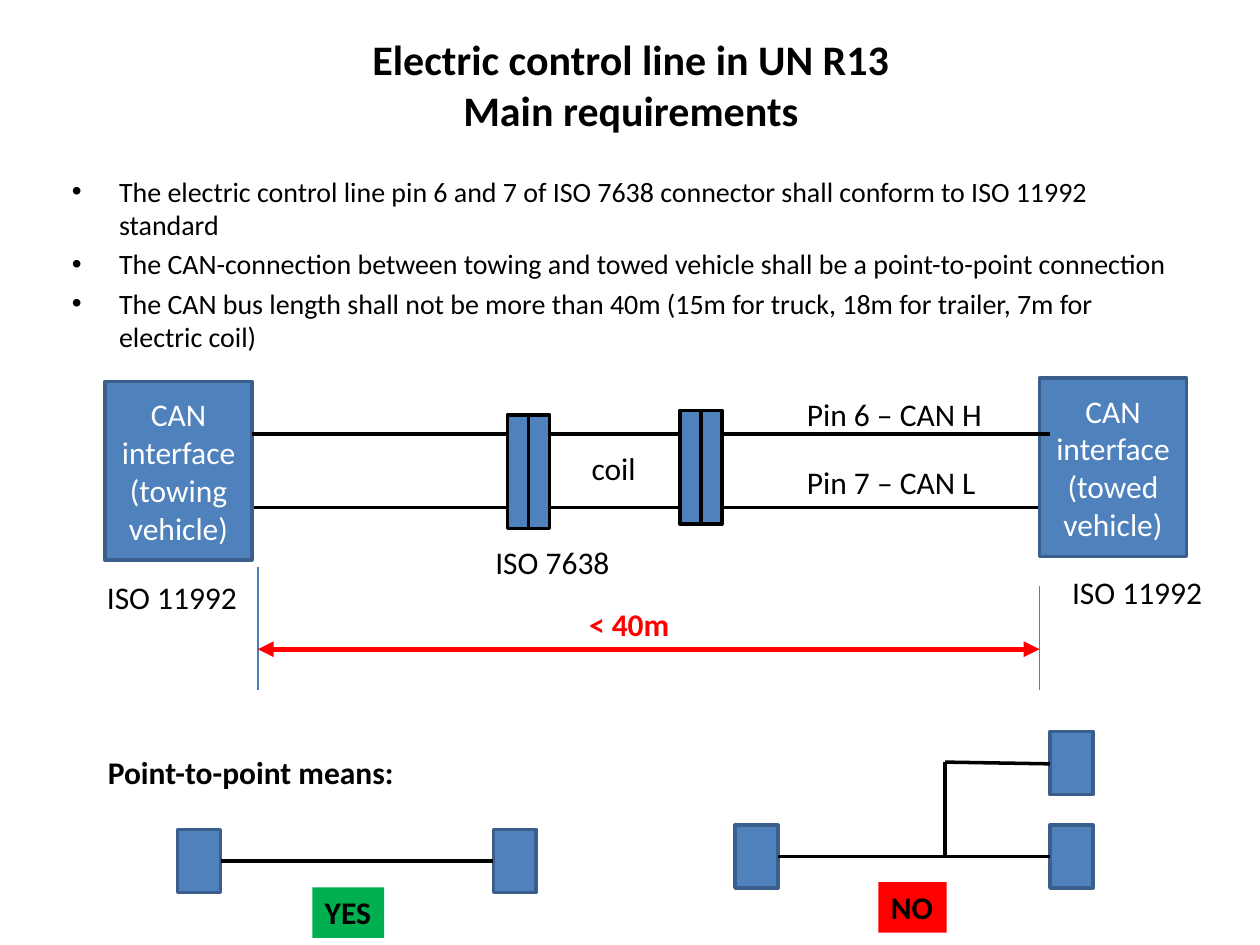
import pptx
import pptx.dml.color
import pptx.enum.shapes
import pptx.enum.text
import pptx.oxml.ns
import pptx.util
from lxml import etree

Pt = pptx.util.Pt
ALIGN = pptx.enum.text.PP_ALIGN
ANCHOR = pptx.enum.text.MSO_ANCHOR
AUTO_SIZE = pptx.enum.text.MSO_AUTO_SIZE

COLORS = {
    "black": "000000", "white": "FFFFFF", "red": "FF0000", "green": "00B050",
    "box": "4F81BD", "box_edge": "3A5F8C", "tick": "4B7EBC",
}
BODY_FONT = {"name": "Calibri", "size": Pt(18), "bold": False}
LABEL_HEIGHT = 29
NODE_WIDTH, NODE_HEIGHT = 24.5, 36
COUPLER_WIDTH, COUPLER_HEIGHT = 24, 65


def rgb(color):
    return pptx.dml.color.RGBColor.from_string(COLORS[color])


def add_child(parent, tag, **attributes):
    return etree.SubElement(parent, pptx.oxml.ns.qn(tag), attributes)


def set_format(target, values):
    for attribute, value in values.items():
        setattr(target, attribute, value)


def write_text(shape, paragraphs, color="black", align=ALIGN.LEFT,
               anchor=ANCHOR.TOP, wrap=True, **font_changes):
    frame = shape.text_frame
    set_format(frame, {
        "word_wrap": wrap,
        "vertical_anchor": anchor,
        "auto_size": AUTO_SIZE.NONE if wrap else AUTO_SIZE.SHAPE_TO_FIT_TEXT,
    })
    for index, text in enumerate(paragraphs):
        paragraph = frame.add_paragraph() if index else frame.paragraphs[0]
        paragraph.text = text
        paragraph.alignment = align
        for run in paragraph.runs:
            set_format(run.font, {**BODY_FONT, **font_changes})
            run.font.color.rgb = rgb(color)
    return frame.paragraphs


def add_text(slide, left, top, width, height, paragraphs, **style):
    box = slide.shapes.add_textbox(Pt(left), Pt(top), Pt(width), Pt(height))
    return write_text(box, paragraphs, **style)


def add_label(slide, left, top, width, text, **style):
    add_text(slide, left, top, width, LABEL_HEIGHT, [text], wrap=False, **style)


def add_bullets(slide, left, top, width, height, points):
    for paragraph in add_text(slide, left, top, width, height, points, size=Pt(16)):
        paragraph.space_before = Pt(3.2)
        properties = paragraph._p.get_or_add_pPr()
        properties.set("marL", str(Pt(27)))
        properties.set("indent", str(-Pt(27)))
        add_child(properties, "a:buFont", typeface="Arial")
        add_child(properties, "a:buChar", char="•")


def add_box(slide, left, top, width, height, fill="box", edge="box_edge"):
    box = slide.shapes.add_shape(pptx.enum.shapes.MSO_SHAPE.RECTANGLE,
                                 Pt(left), Pt(top), Pt(width), Pt(height))
    box.shadow.inherit = False
    box.fill.solid()
    box.fill.fore_color.rgb = rgb(fill)
    if edge:
        box.line.color.rgb = rgb(edge)
        box.line.width = Pt(2)
    else:
        box.line.fill.background()
    return box


def add_line(slide, x1, y1, x2, y2, color="black", weight=2, arrows=False):
    line = slide.shapes.add_connector(pptx.enum.shapes.MSO_CONNECTOR.STRAIGHT,
                                      Pt(x1), Pt(y1), Pt(x2), Pt(y2))
    line.line.color.rgb = rgb(color)
    line.line.width = Pt(weight)
    if arrows:
        outline = line.line._get_or_add_ln()
        for end in ("a:headEnd", "a:tailEnd"):
            add_child(outline, end, type="triangle")
    add_child(line._element.spPr, "a:effectLst")


def add_interface(slide, left, top, text):
    interface = add_box(slide, left, top, 84, 102)
    write_text(interface, [text], color="white", align=ALIGN.CENTER,
               anchor=ANCHOR.MIDDLE)


def add_coupler(slide, left, top):
    middle = left + COUPLER_WIDTH / 2
    add_box(slide, left, top, COUPLER_WIDTH, COUPLER_HEIGHT, edge="black")
    add_line(slide, middle, top, middle, top + COUPLER_HEIGHT)


def add_node(slide, left, top):
    add_box(slide, left, top, NODE_WIDTH, NODE_HEIGHT)


def add_link(slide, left, right, top):
    """Two nodes joined by a straight wire."""
    for node_left in (left, right):
        add_node(slide, node_left, top)
    wire_y = top + NODE_HEIGHT / 2
    add_line(slide, left + NODE_WIDTH, wire_y, right, wire_y)


def add_verdict(slide, left, top, width, text, fill):
    verdict = add_box(slide, left, top, width, LABEL_HEIGHT, fill, edge=None)
    write_text(verdict, [text], wrap=False, bold=True)


def main():
    deck = pptx.Presentation()
    deck.slide_width, deck.slide_height = Pt(720), Pt(540)
    slide = deck.slides.add_slide(deck.slide_layouts[6])

    # Title and requirements
    add_text(slide, 36.5, 18, 648, 60,
             ["Electric control line in UN R13\vMain requirements"],
             align=ALIGN.CENTER, anchor=ANCHOR.MIDDLE, size=Pt(24), bold=True)
    add_bullets(slide, 34, 96, 648, 102, [
        "The electric control line pin 6 and 7 of ISO 7638 connector shall "
        "conform to ISO 11992 standard",
        "The CAN-connection between towing and towed vehicle shall be a "
        "point-to-point connection",
        "The CAN bus length shall not be more than 40m (15m for truck, "
        "18m for trailer, 7m for electric coil)",
    ])

    # CAN bus: the pin 7 wire runs behind the interfaces, pin 6 in front
    add_line(slide, 144, 290, 600, 290)
    add_interface(slide, 60, 218, "CAN interface (towing vehicle)")
    add_interface(slide, 594, 216, "CAN interface (towed vehicle)")
    add_line(slide, 144, 248, 600, 248)
    for coupler_left, coupler_top in ((290, 237), (388.5, 234.5)):
        add_coupler(slide, coupler_left, coupler_top)
    for left, top, width, text in (
        (276, 306.5, 81, "ISO 7638"),
        (454, 222, 116, "Pin 6 – CAN H"),
        (454, 261, 112, "Pin 7 – CAN L"),
        (54, 327, 90, "ISO 11992"),
        (605.5, 324, 90, "ISO 11992"),
        (331, 253, 41, "coil"),
    ):
        add_label(slide, left, top, width, text)

    # Bus length dimension
    for tick_x, tick_top in ((147.4, 324), (594, 335)):
        add_line(slide, tick_x, tick_top, tick_x, 394.5, "tick", 0.75)
    add_line(slide, 147.4, 371, 594, 371, "red", 3, arrows=True)
    add_label(slide, 329.5, 342, 62, "< 40m", color="red", bold=True)

    # Allowed link
    add_label(slide, 54.5, 427, 179, "Point-to-point means:", bold=True)
    add_link(slide, 101.5, 282, 474)
    add_verdict(slide, 178.5, 507, 41, "YES", "green")

    # Forbidden link with a branch
    add_link(slide, 420, 600, 471.5)
    add_node(slide, 600, 418)
    add_line(slide, 540, 435.5, 600, 436.5)
    add_line(slide, 540, 435.5, 540, 489.5)
    add_verdict(slide, 502, 504, 39, "NO", "red")

    deck.save("out.pptx")


if __name__ == "__main__":
    main()
